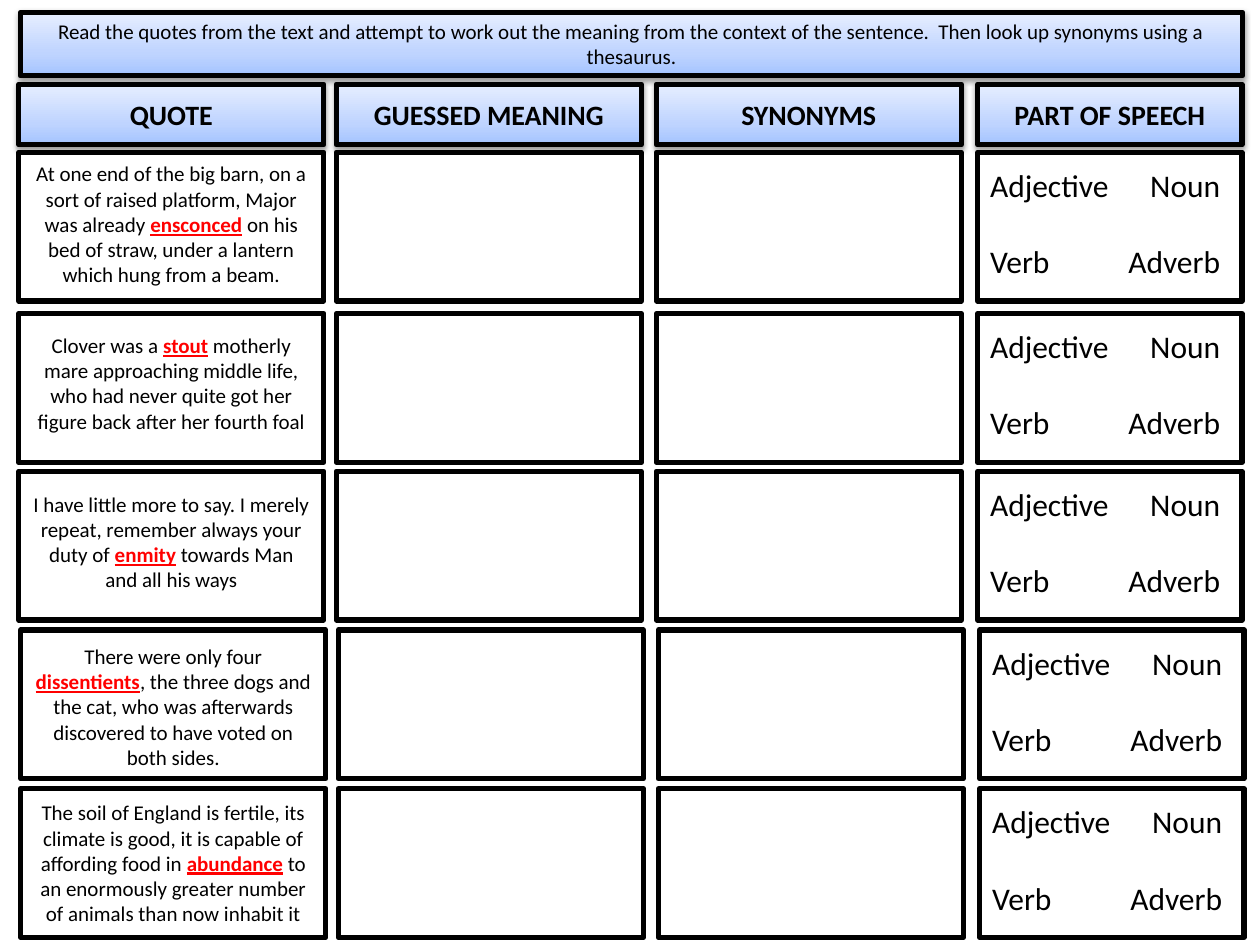
"""Build a vocabulary worksheet slide with quotes and blank answer boxes."""
from copy import deepcopy

from lxml.etree import SubElement
from pptx import Presentation
from pptx.dml.color import RGBColor
from pptx.enum.shapes import MSO_SHAPE
from pptx.enum.text import MSO_ANCHOR, MSO_AUTO_SIZE, PP_ALIGN
from pptx.oxml.ns import qn
from pptx.util import Cm, Pt

BLACK = RGBColor(0, 0, 0)
WHITE = RGBColor(255, 255, 255)
RED = RGBColor(255, 0, 0)
BLUES = [
    (0, RGBColor(0xA4, 0xC4, 0xFF)),
    (0.35, RGBColor(0xBF, 0xD4, 0xFF)),
    (1, RGBColor(0xE6, 0xEE, 0xFF)),
]
FONT = "Calibri"
COLS = [(0.38, 6.15), (6.78, 6.15), (13.23, 6.15), (19.71, 5.33)]
HEADS = ["QUOTE", "GUESSED MEANING", "SYNONYMS", "PART OF SPEECH"]
TASK = (
    "Read the quotes from the text and attempt to work out the meaning from "
    "the context of the sentence.  Then look up synonyms using a thesaurus."
)
ROWS = [
    (0, 3.07, 3.12, 2.82, (
        "At one end of the big barn, on a sort of raised platform, Major was already ",
        "ensconced",
        " on his bed of straw, under a lantern which hung from a beam.")),
    (0, 6.32, 6.58, 2.31, (
        "Clover was a ",
        "stout",
        " motherly mare approaching middle life, who had never quite got her "
        "figure back after her fourth foal")),
    (0, 9.5, 9.78, 2.31, (
        "I have little more to say. I merely repeat, remember always your duty of ",
        "enmity",
        " towards Man and all his ways")),
    (0.04, 12.7, 12.85, 2.82, (
        "There were only four ",
        "dissentients",
        ", the three dogs and the cat, who was afterwards discovered to have "
        "voted on both sides.")),
    (0.04, 15.9, 16, 2.82, (
        "The soil of England is fertile, its climate is good, it is capable of "
        "affording food in ",
        "abundance",
        " to an enormously greater number of animals than now inhabit it")),
]


def style(run, size, color=BLACK, bold=False):
    """Set the font of a run."""
    font = run.font
    font.name, font.size, font.bold = FONT, Pt(size), bold
    font.color.rgb = color


def add_box(slide, left, top, width, height):
    """Add a white rectangle with a thick black outline."""
    box = slide.shapes.add_shape(
        MSO_SHAPE.RECTANGLE, Cm(left), Cm(top), Cm(width), Cm(height))
    box.shadow.inherit = False
    box.fill.solid()
    box.fill.fore_color.rgb = WHITE
    box.line.color.rgb = BLACK
    box.line.width = Pt(3)
    return box


def add_shade(box):
    """Give a box the blue gradient and a soft shadow."""
    box.fill.gradient()
    box.fill.gradient_angle = 90
    props = box._element.spPr
    stops = props.find(".//" + qn("a:gsLst"))
    stops.insert(1, deepcopy(stops[0]))
    for stop, (place, color) in zip(box.fill.gradient_stops, BLUES):
        stop.position = place
        stop.color.rgb = color
    glow = SubElement(
        props.find(qn("a:effectLst")), qn("a:outerShdw"), blurRad="40000",
        dist="20000", dir="5400000", rotWithShape="0")
    tint = SubElement(glow, qn("a:srgbClr"), val=str(BLACK))
    SubElement(tint, qn("a:alpha"), val="38000")


def add_head(slide, place, text, size, bold, anchor):
    """Add a shaded box with centred text."""
    box = add_box(slide, *place)
    add_shade(box)
    frame = box.text_frame
    frame.text = text
    frame.word_wrap = True
    frame.vertical_anchor = anchor
    para = frame.paragraphs[0]
    para.alignment = PP_ALIGN.CENTER
    style(para.runs[0], size, bold=bold)


def add_text(slide, left, top, width, height):
    """Add a wrapping text box and return its frame."""
    box = slide.shapes.add_textbox(Cm(left), Cm(top), Cm(width), Cm(height))
    frame = box.text_frame
    frame.word_wrap = True
    frame.auto_size = MSO_AUTO_SIZE.SHAPE_TO_FIT_TEXT
    return frame


def add_quote(slide, place, parts):
    """Add a centred quote with its key word in red."""
    para = add_text(slide, *place).paragraphs[0]
    para.alignment = PP_ALIGN.CENTER
    for part in parts:
        run = para.add_run()
        run.text = part
        style(run, 12)
    key = para.runs[1]
    style(key, 12, RED, True)
    key.font.underline = True


def add_speech(slide, place):
    """Add the four word classes in two tabbed lines."""
    frame = add_text(slide, *place)
    frame.text = "Adjective\tNoun\nVerb\tAdverb"
    for para in frame.paragraphs:
        tabs = SubElement(para._p.get_or_add_pPr(), qn("a:tabLst"))
        SubElement(tabs, qn("a:tab"), pos=str(Cm(4.64)), algn="r")
        style(para.runs[0], 18)
    frame.paragraphs[1].space_before = Pt(22)


def add_row(slide, shift, top, start, height, parts):
    """Add one row of boxes with its quote and word classes."""
    cells = [(left + shift, width) for left, width in COLS]
    for left, width in cells:
        add_box(slide, left, top, width, 3)
    left, width = cells[0]
    add_quote(slide, (left, start, width, height), parts)
    left, width = cells[-1]
    add_speech(slide, (left, top + 0.15, width, 2.57))


def main():
    """Build and save the slide."""
    deck = Presentation()
    deck.slide_width, deck.slide_height = Cm(25.4), Cm(19.05)
    slide = deck.slides.add_slide(deck.slide_layouts[6])
    for (left, width), text in zip(COLS, HEADS):
        add_head(slide, (left, 1.7, width, 1.22), text, 16, True, MSO_ANCHOR.MIDDLE)
    for row in ROWS:
        add_row(slide, *row)
    add_head(slide, (0.41, 0.25, 24.64, 1.28), TASK, 12, False, MSO_ANCHOR.TOP)
    deck.save("out.pptx")


if __name__ == "__main__":
    main()
